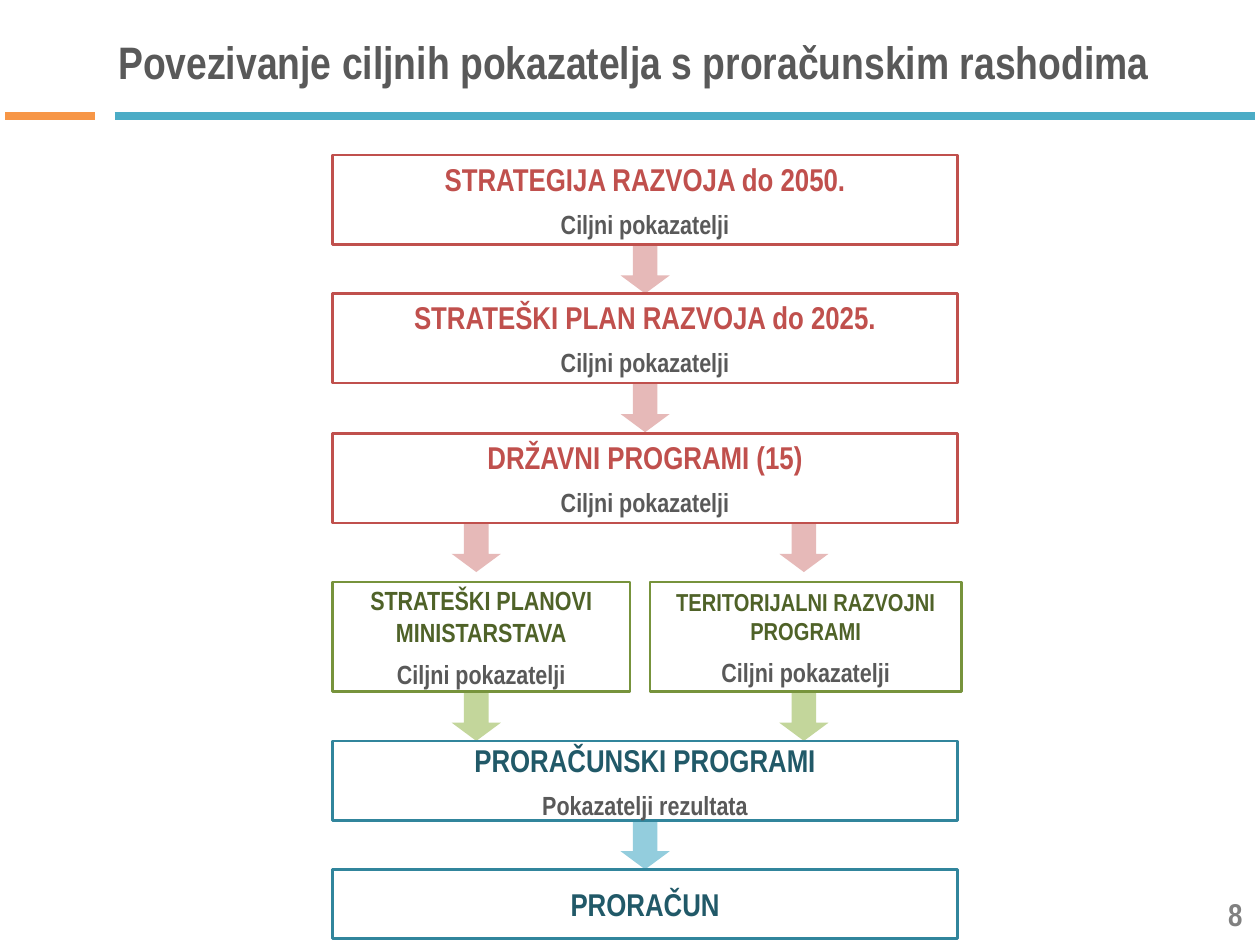
"""Build a slide linking target indicators to budget expenditure."""
from dataclasses import dataclass

from lxml import etree
from pptx import Presentation
from pptx.dml.color import RGBColor
from pptx.enum import shapes, text
from pptx.oxml.ns import qn
from pptx.util import Inches, Pt


@dataclass(frozen=True)
class Theme:
    font: str = "Arial Narrow"
    ink: str = "595959"
    muted: str = "808080"
    teal: str = "4BACC6"
    orange: str = "F79646"
    title: int = 26
    heading: int = 18
    body: int = 15
    small: int = 14
    gap: int = 6
    rule: float = 4.5
    border: float = 1.5


THEME = Theme()
PALETTES = {
    "red": {"line": "C0504D", "heading": "C0504D", "arrow": "E6B9B8"},
    "green": {"line": "77933C", "heading": "4F6228", "arrow": "C3D69B"},
    "blue": {"line": "31859C", "heading": "215968", "arrow": "93CDDD"},
}
TITLE = "Povezivanje ciljnih pokazatelja s proračunskim rashodima"
PAGE_NUMBER = "8"
TARGET = "Ciljni pokazatelji"
RESULT = "Pokazatelji rezultata"

LEFT, FULL = 2.64, 4.96
CENTRE, BRANCHES = [5.12], [3.78, 6.38]
ARROW = 0.39

# LEVELS: top, height, palette, arrow centres, boxes (left, width, headings, size, note)
LEVELS = [
    (1.23, 0.71, "red", CENTRE,
     [(LEFT, FULL, ["STRATEGIJA RAZVOJA do 2050."], THEME.heading, TARGET)]),
    (2.33, 0.71, "red", CENTRE,
     [(LEFT, FULL, ["STRATEŠKI PLAN RAZVOJA do 2025."], THEME.heading, TARGET)]),
    (3.44, 0.71, "red", BRANCHES,
     [(LEFT, FULL, ["DRŽAVNI PROGRAMI (15)"], THEME.heading, TARGET)]),
    (4.62, 0.87, "green", BRANCHES,
     [(LEFT, 2.36, ["STRATEŠKI PLANOVI", "MINISTARSTAVA"], THEME.body, TARGET),
      (5.16, 2.47, ["TERITORIJALNI RAZVOJNI PROGRAMI"], THEME.small, TARGET)]),
    (5.88, 0.63, "blue", CENTRE,
     [(LEFT, FULL, ["PRORAČUNSKI PROGRAMI"], THEME.heading, RESULT)]),
    (6.9, 0.55, "blue", [],
     [(LEFT, FULL, ["PRORAČUN"], THEME.heading, None)]),
]
RULES = [(0.91, 9.96, THEME.teal), (0.04, 0.75, THEME.orange)]
RULE_TOP = 0.92


def write(frame, words, size, color, align=text.PP_ALIGN.CENTER, after=0):
    """Add one formatted paragraph to a text frame."""
    frame.word_wrap = True
    frame.vertical_anchor = text.MSO_ANCHOR.MIDDLE
    para = frame.paragraphs[0] if not frame.text else frame.add_paragraph()
    para.alignment = align
    para.space_after = Pt(after)
    span = para.add_run()
    span.text = words
    span.font.name = THEME.font
    span.font.size = Pt(size)
    span.font.bold = True
    span.font.color.rgb = RGBColor.from_string(color)


def add_label(page, area, words, **style):
    """Add a text box holding one paragraph."""
    box = page.shapes.add_textbox(*map(Inches, area))
    write(box.text_frame, words, **style)


def add_rule(page, start, end, color):
    """Draw one horizontal rule under the title."""
    rule = page.shapes.add_connector(
        shapes.MSO_CONNECTOR.STRAIGHT, *map(Inches, (start, RULE_TOP, end, RULE_TOP)))
    rule.line.color.rgb = RGBColor.from_string(color)
    rule.line.width = Pt(THEME.rule)
    etree.SubElement(rule._element.spPr, qn("a:effectLst"))


def add_arrow(page, centre, top, color):
    """Draw a downward block arrow."""
    arrow = page.shapes.add_shape(
        shapes.MSO_SHAPE.DOWN_ARROW,
        *map(Inches, (centre - ARROW / 2, top, ARROW, ARROW)))
    arrow.adjustments[0] = 0.5
    arrow.adjustments[1] = 0.37
    arrow.shadow.inherit = False
    arrow.fill.solid()
    arrow.fill.fore_color.rgb = RGBColor.from_string(color)
    arrow.line.fill.background()


def add_box(page, area, palette, headings, size, note):
    """Draw an outlined box with its headings and optional note."""
    box = page.shapes.add_shape(
        shapes.MSO_SHAPE.ROUNDED_RECTANGLE, *map(Inches, area))
    box.adjustments[0] = 0
    box.shadow.inherit = False
    box.fill.background()
    box.line.color.rgb = RGBColor.from_string(palette["line"])
    box.line.width = Pt(THEME.border)
    for heading in headings:
        after = THEME.gap if heading == headings[-1] else 0
        write(box.text_frame, heading, size, palette["heading"], after=after)
    if note:
        write(box.text_frame, note, THEME.body, THEME.ink)


def main():
    """Assemble and save the deck."""
    deck = Presentation()
    deck.slide_width, deck.slide_height = Inches(10), Inches(7.5)
    page = deck.slides.add_slide(deck.slide_layouts[6])
    add_label(page, (0.35, 0.14, 9.37, 0.69), TITLE,
              size=THEME.title, color=THEME.ink, after=THEME.gap)
    add_label(page, (7.63, 7.05, 2.33, 0.4), PAGE_NUMBER,
              size=THEME.heading, color=THEME.muted, align=text.PP_ALIGN.RIGHT)
    for rule in RULES:
        add_rule(page, *rule)
    for top, height, tone, centres, _ in LEVELS:
        for centre in centres:
            add_arrow(page, centre, top + height, PALETTES[tone]["arrow"])
    for top, height, tone, _, boxes in LEVELS:
        for left, width, *content in boxes:
            add_box(page, (left, top, width, height), PALETTES[tone], *content)
    deck.save("out.pptx")


if __name__ == "__main__":
    main()
